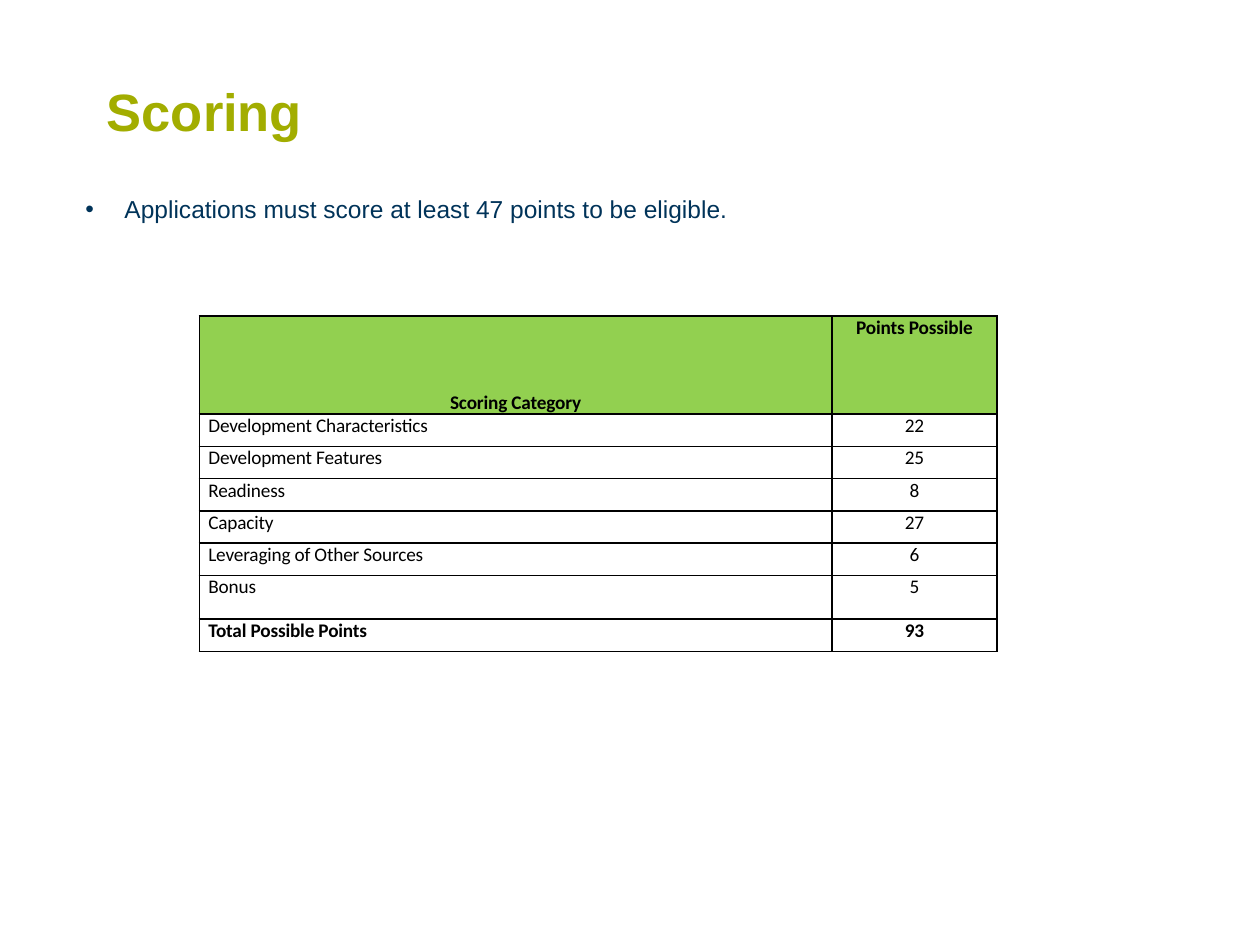
"""Build the scoring slide with its title, eligibility bullet and points table."""
from pptx import Presentation as Deck
from pptx.dml.color import RGBColor
from pptx.enum.text import MSO_ANCHOR as Anchor, PP_ALIGN as Align
from pptx.oxml import parse_xml
from pptx.oxml.ns import nsdecls
from pptx.util import Cm, Pt

HEADINGS = ("Scoring Category", "Points Possible")
SCORES = (
    ("Development Characteristics", "22"),
    ("Development Features", "25"),
    ("Readiness", "8"),
    ("Capacity", "27"),
    ("Leveraging of Other Sources", "6"),
    ("Bonus", "5"),
    ("Total Possible Points", "93"),
)
COLUMN_WIDTHS = (12.75, 3.33)
ROW_HEIGHTS = (1.98, 0.65, 0.65, 0.65, 0.65, 0.65, 0.88, 0.65)


def color(value):
    return RGBColor.from_string(value)


def assign(target, values):
    for name, value in values.items():
        setattr(target, name, value)


def element(tag, attributes="", content=""):
    return parse_xml(f'<a:{tag} {nsdecls("a")} {attributes}>{content}</a:{tag}>')


def solid(value):
    return f'<a:solidFill><a:srgbClr val="{value}"/></a:solidFill>'


class ScoringSlide:
    title_font = {"name": "Arial", "size": Pt(30), "bold": True}
    body_font = {"name": "Arial", "size": Pt(14), "bold": False}
    cell_font = {"name": "Calibri", "size": Pt(11)}
    olive, navy, green, black = "A2AD00", "003359", "92D050", "000000"

    def __init__(self, deck):
        self.page = deck.slides.add_slide(deck.slide_layouts[5])

    def add_span(self, para, text, font, ink):
        span = para.add_run()
        span.text = text
        assign(span.font, font)
        span.font.color.rgb = color(ink)
        return span

    def title(self, text, left, top, width, height):
        box = self.page.shapes.title
        assign(box, {"left": Cm(left), "top": Cm(top),
                     "width": Cm(width), "height": Cm(height)})
        assign(box.text_frame, {"vertical_anchor": Anchor.MIDDLE, "word_wrap": True})
        para = box.text_frame.paragraphs[0]
        para.alignment = Align.LEFT
        self.add_span(para, text, self.title_font, self.olive)

    def bullet(self, text, left, top, width, height):
        box = self.page.shapes.add_textbox(Cm(left), Cm(top), Cm(width), Cm(height))
        assign(box.text_frame, {"word_wrap": True, "margin_top": Cm(0.74)})
        para = box.text_frame.paragraphs[0]
        properties = para._p.get_or_add_pPr()
        properties.set("marL", str(Cm(0.79)))
        properties.set("indent", str(-Cm(0.79)))
        properties.append(element("buClr", content=f'<a:srgbClr val="{self.navy}"/>'))
        properties.append(element("buFont", 'typeface="Arial"'))
        properties.append(element("buChar", 'char="•"'))
        self.add_span(para, text, self.body_font, self.navy)

    def table(self, rows, left, top, widths, heights):
        frame = self.page.shapes.add_table(
            len(rows), len(widths), Cm(left), Cm(top), Cm(sum(widths)), Cm(sum(heights)))
        table = frame.table
        assign(table, {"first_row": False, "horz_banding": False})
        for column, width in zip(table.columns, widths):
            column.width = Cm(width)
        for row, height in zip(table.rows, heights):
            row.height = Cm(height)
        last = len(rows) - 1
        for row_index, texts in enumerate(rows):
            for column_index, text in enumerate(texts):
                header = row_index == 0
                self.cell(table.cell(row_index, column_index), text, header,
                          bold=row_index in (0, last),
                          centered=header or column_index == 1)
        table.cell(0, 0).vertical_anchor = Anchor.BOTTOM

    def cell(self, cell, text, header, bold, centered):
        assign(cell, {"margin_left": Cm(0.18), "margin_right": Cm(0.18),
                      "margin_top": 0, "margin_bottom": 0,
                      "vertical_anchor": Anchor.TOP})
        properties = cell._tc.get_or_add_tcPr()
        for side in ("lnL", "lnR", "lnT", "lnB"):
            properties.append(element(side, f'w="{Pt(1)}"', solid(self.black)))
        if header:
            cell.fill.solid()
            cell.fill.fore_color.rgb = color(self.green)
        else:
            cell.fill.background()
        para = cell.text_frame.paragraphs[0]
        assign(para, {"alignment": Align.CENTER if centered else Align.LEFT,
                      "line_spacing": 0.97})
        span = self.add_span(para, text, {**self.cell_font, "bold": bold}, self.black)
        span._r.get_or_add_rPr().set("spc", "-10")


def main():
    deck = Deck()
    assign(deck, {"slide_width": Cm(25.4), "slide_height": Cm(19.05)})
    slide = ScoringSlide(deck)
    slide.title("Scoring", 1.9, 0.64, 23.24, 3.18)
    slide.bullet("Applications must score at least 47 points to be eligible.",
                 1.47, 3.18, 18.42, 12.57)
    slide.table((HEADINGS, *SCORES), 4.02, 6.37, COLUMN_WIDTHS, ROW_HEIGHTS)
    deck.save("out.pptx")


if __name__ == "__main__":
    main()
